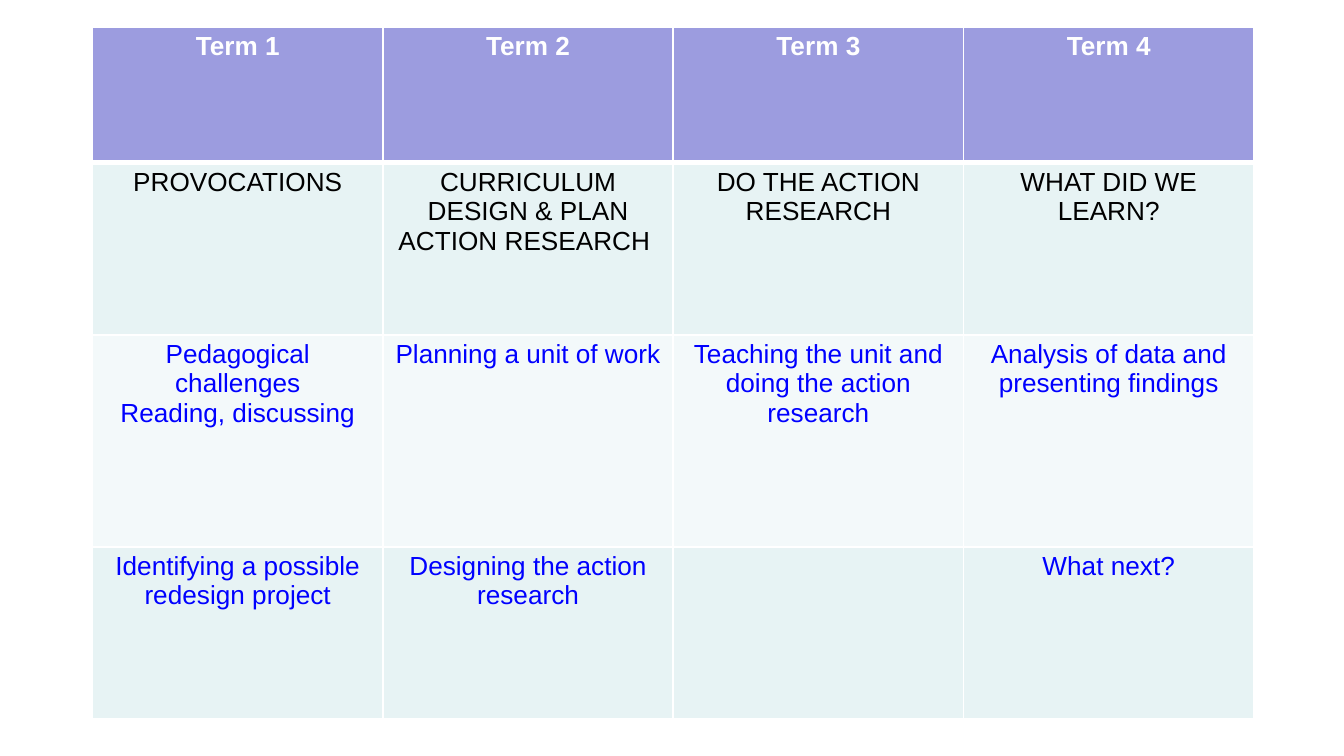
from dataclasses import dataclass

from lxml.etree import SubElement
from pptx import Presentation
from pptx.dml.color import RGBColor as Rgb
from pptx.enum.text import PP_ALIGN as Align
from pptx.oxml.ns import qn
from pptx.util import Cm, Pt


@dataclass(frozen=True)
class Theme:
    font: str = "Arial"
    text_size: float = 14
    thin_border: float = 1
    thick_border: float = 3
    border: str = "FFFFFF"
    header_text: str = "FFFFFF"
    stage_text: str = "000000"
    activity_text: str = "0000FF"
    header_fill: str = "9C9CDF"
    dark_band: str = "E7F3F4"
    light_band: str = "F3F9FA"


@dataclass(frozen=True)
class RowStyle:
    height: float
    fill: str
    text: str
    bold: bool = False


@dataclass(frozen=True)
class Box:
    left: float
    top: float
    width: float
    height: float


THEME = Theme()

ROW_STYLES = [
    RowStyle(2.57, THEME.header_fill, THEME.header_text, bold=True),
    RowStyle(3.25, THEME.dark_band, THEME.stage_text),
    RowStyle(4.01, THEME.light_band, THEME.activity_text),
    RowStyle(3.25, THEME.dark_band, THEME.activity_text),
]

TERM_PLAN = [
    ["Term 1", "Term 2", "Term 3", "Term 4"],
    [
        "PROVOCATIONS",
        "CURRICULUM DESIGN & PLAN ACTION RESEARCH ",
        "DO THE ACTION RESEARCH",
        "WHAT DID WE LEARN?",
    ],
    [
        "Pedagogical challenges\nReading, discussing",
        "Planning a unit of work",
        "Teaching the unit and doing the action research",
        "Analysis of data and presenting findings",
    ],
    [
        "Identifying a possible redesign project",
        "Designing the action research",
        "",
        "What next?",
    ],
]


def set_borders(cell, top, bottom):
    properties = cell._tc.get_or_add_tcPr()
    widths = {"L": THEME.thin_border, "R": THEME.thin_border, "T": top, "B": bottom}
    for side, width in widths.items():
        line = SubElement(properties, qn(f"a:ln{side}"), w=str(Pt(width)))
        fill = SubElement(line, qn("a:solidFill"))
        SubElement(fill, qn("a:srgbClr"), val=THEME.border)


def fill_cell(cell, text, style):
    cell.margin_left = cell.margin_right = Cm(0.18)
    cell.margin_top = cell.margin_bottom = Cm(0.09)
    cell.fill.solid()
    cell.fill.fore_color.rgb = Rgb.from_string(style.fill)
    cell.text_frame.text = text
    for paragraph in cell.text_frame.paragraphs:
        paragraph.alignment = Align.CENTER
        font = paragraph.font
        font.name = THEME.font
        font.size = Pt(THEME.text_size)
        font.bold = style.bold
        font.color.rgb = Rgb.from_string(style.text)


def add_term_table(slide, box):
    row_count, column_count = len(TERM_PLAN), len(TERM_PLAN[0])
    table = slide.shapes.add_table(
        row_count, column_count,
        Cm(box.left), Cm(box.top), Cm(box.width), Cm(box.height),
    ).table
    table.horz_banding = False
    for column in table.columns:
        column.width = Cm(box.width / column_count)

    scale = box.height / sum(style.height for style in ROW_STYLES)
    for row_index, (texts, style) in enumerate(zip(TERM_PLAN, ROW_STYLES)):
        table.rows[row_index].height = Cm(style.height * scale)
        top = THEME.thick_border if row_index == 1 else THEME.thin_border
        bottom = THEME.thick_border if row_index == 0 else THEME.thin_border
        for column_index, text in enumerate(texts):
            cell = table.cell(row_index, column_index)
            set_borders(cell, top, bottom)
            fill_cell(cell, text, style)


def main():
    presentation = Presentation()
    presentation.slide_width = Cm(25.4)
    presentation.slide_height = Cm(14.29)
    slide = presentation.slides.add_slide(presentation.slide_layouts[6])
    add_term_table(slide, Box(left=1.75, top=0.51, width=21.95, height=13.08))
    presentation.save("out.pptx")


if __name__ == "__main__":
    main()
